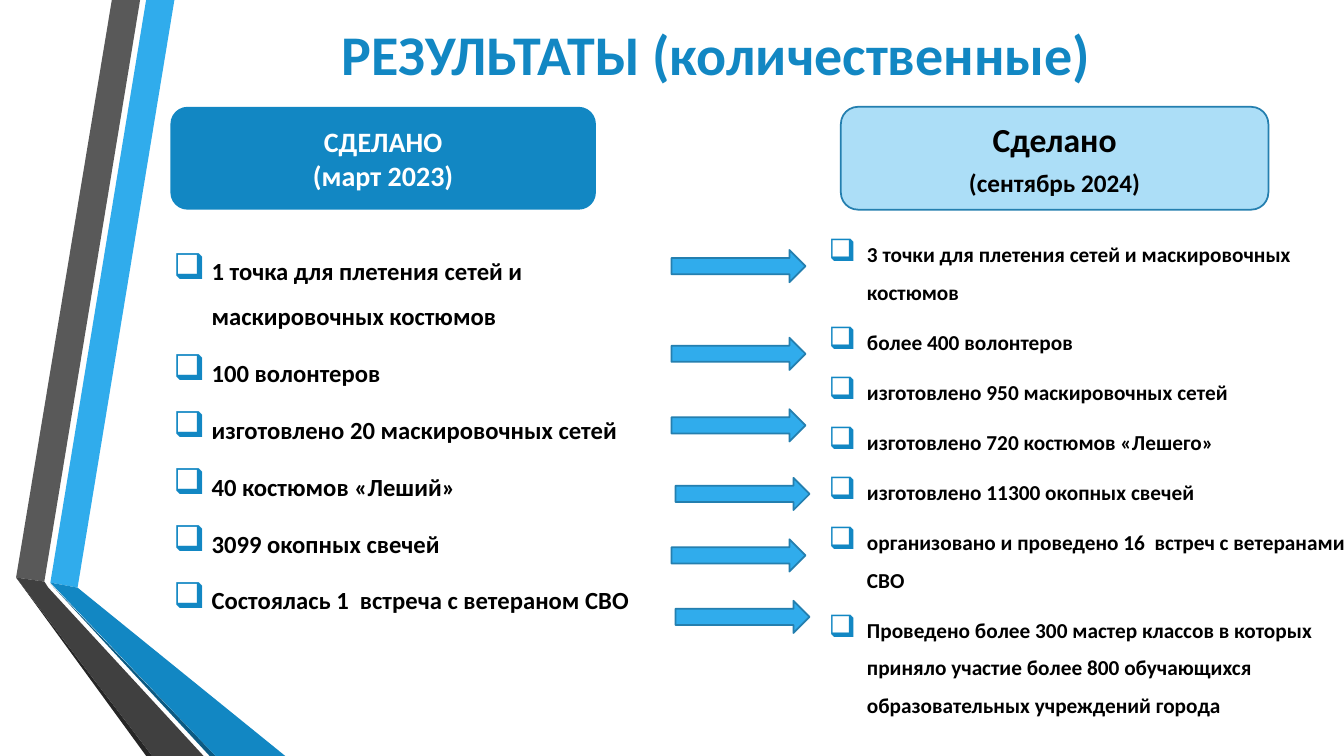
import dataclasses

import lxml.etree
import pptx
import pptx.dml.color
import pptx.enum.shapes
import pptx.enum.text
import pptx.oxml.ns
import pptx.util

SHAPES = pptx.enum.shapes.MSO_SHAPE
ALIGN = pptx.enum.text.PP_ALIGN
ANCHOR = pptx.enum.text.MSO_ANCHOR


@dataclasses.dataclass(frozen=True)
class Theme:
    font: str = "Calibri"
    blue: str = "1287C3"
    bright: str = "30ACEC"
    pale: str = "ACDEF7"
    outline: str = "247FAF"
    navy: str = "0C5A82"
    gray: str = "595959"
    dark: str = "404040"
    darkest: str = "262626"
    black: str = "000000"
    white: str = "FFFFFF"
    title: float = 40
    before_head: float = 20
    after_head: float = 24
    after_date: float = 18
    before_list: float = 17.6
    after_list: float = 15.2
    line: float = 1.25
    item_gap: float = 9


@dataclasses.dataclass(frozen=True)
class Box:
    left: float
    top: float
    width: float
    height: float

    def emu(self):
        return [pptx.util.Inches(v) for v in dataclasses.astuple(self)]


THEME = Theme()
SLIDE = Box(0, 0, 13.33, 7.5)

RIBBON_GRID = (267, 750)
RIBBONS = [
    (THEME.bright, [(34, 578), (61, 583), (157, 0), (129, 0)]),
    (THEME.gray, [(123, 0), (95, 0), (0, 573), (28, 577)]),
    (THEME.darkest, [(0, 573), (129, 750), (135, 750)]),
    (THEME.navy, [(34, 579), (192, 750), (198, 750)]),
    (THEME.blue, [(34, 578), (198, 750), (267, 750), (61, 583)]),
    (THEME.dark, [(186, 750), (32, 583), (28, 577), (0, 573), (135, 750)]),
]

BEFORE = [
    "1 точка для плетения сетей и маскировочных костюмов",
    "100 волонтеров",
    "изготовлено 20 маскировочных сетей",
    "40 костюмов «Леший»",
    "3099 окопных свечей",
    "Состоялась 1  встреча с ветераном СВО",
]
AFTER = [
    "3 точки для плетения сетей и маскировочных костюмов",
    "более 400 волонтеров",
    "изготовлено 950 маскировочных сетей",
    "изготовлено 720 костюмов «Лешего»",
    "изготовлено 11300 окопных свечей",
    "организовано и проведено 16  встреч с ветеранами СВО",
    "Проведено более 300 мастер классов в которых приняло участие "
    "более 800 обучающихся образовательных учреждений города",
]
ARROW_SPOTS = [(0, 0), (0, 0.87), (0, 1.58), (0.04, 2.26), (0, 2.87), (0.04, 3.48)]


def rgb(color):
    return pptx.dml.color.RGBColor.from_string(color)


def paint(shape, fill, outline=None):
    shape.shadow.inherit = False
    shape.fill.solid()
    shape.fill.fore_color.rgb = rgb(fill)
    if outline:
        shape.line.color.rgb = rgb(outline)
        shape.line.width = pptx.util.Pt(THEME.line)
    else:
        shape.line.fill.background()


def write(shape, lines, sizes, color, align, anchor):
    frame = shape.text_frame
    frame.text = "\n".join(lines)
    frame.word_wrap = True
    frame.vertical_anchor = anchor
    for paragraph, size in zip(frame.paragraphs, sizes):
        paragraph.alignment = align
        for run in paragraph.runs:
            run.font.name = THEME.font
            run.font.size = pptx.util.Pt(size)
            run.font.bold = True
            run.font.color.rgb = rgb(color)
    return frame


def add_checkbox(paragraph):
    props = paragraph._p.get_or_add_pPr()
    indent = pptx.util.Inches(0.38)
    props.set("marL", str(indent))
    props.set("indent", str(-indent))
    qn = pptx.oxml.ns.qn
    bullet_color = lxml.etree.SubElement(props, qn("a:buClr"))
    lxml.etree.SubElement(bullet_color, qn("a:srgbClr"), val=THEME.blue)
    lxml.etree.SubElement(props, qn("a:buSzPct"), val="145000")
    lxml.etree.SubElement(props, qn("a:buChar"), char="❑")


def draw_ribbons(slide, box):
    left, top, width, height = box.emu()
    scale = (width / RIBBON_GRID[0], height / RIBBON_GRID[1])
    for color, (start, *corners) in RIBBONS:
        outline = slide.shapes.build_freeform(*start, scale=scale)
        outline.add_line_segments(corners, close=True)
        paint(outline.convert_to_shape(left, top), color)


def draw_title(slide, box):
    title = slide.shapes.add_textbox(*box.emu())
    write(title, ["РЕЗУЛЬТАТЫ (количественные)"], [THEME.title], THEME.blue,
          ALIGN.CENTER, ANCHOR.MIDDLE)


def draw_header(slide, box, lines, sizes, color, fill, outline=None, gap=0):
    header = slide.shapes.add_shape(SHAPES.ROUNDED_RECTANGLE, *box.emu())
    paint(header, fill, outline)
    frame = write(header, lines, sizes, color, ALIGN.CENTER, ANCHOR.MIDDLE)
    frame.paragraphs[-1].space_before = pptx.util.Pt(gap)


def draw_checklist(slide, box, items, size, spacing):
    checklist = slide.shapes.add_textbox(*box.emu())
    frame = write(checklist, items, [size] * len(items), THEME.black,
                  ALIGN.LEFT, ANCHOR.BOTTOM)
    frame.margin_top = frame.margin_bottom = 0
    for paragraph in frame.paragraphs:
        paragraph.line_spacing = spacing
        paragraph.space_before = pptx.util.Pt(THEME.item_gap)
        add_checkbox(paragraph)


def draw_arrows(slide, box):
    for shift, drop in ARROW_SPOTS:
        spot = Box(box.left + shift, box.top + drop, 1.33, 0.32)
        arrow = slide.shapes.add_shape(SHAPES.RIGHT_ARROW, *spot.emu())
        paint(arrow, THEME.bright, THEME.outline)


def draw_results(slide):
    draw_ribbons(slide, Box(0.16, 0, 2.67, SLIDE.height))
    draw_title(slide, Box(1.62, 0, 10.96, 1.06))
    draw_header(slide, Box(1.69, 1.06, 4.22, 1.02), ["СДЕЛАНО", "(март 2023)"],
                [THEME.before_head] * 2, THEME.white, THEME.blue)
    draw_header(slide, Box(8.34, 1.06, 4.24, 1.02), ["Сделано", "(сентябрь 2024)"],
                [THEME.after_head, THEME.after_date], THEME.black,
                THEME.pale, THEME.outline, gap=6)
    draw_checklist(slide, Box(1.62, 2.19, 4.99, 3.91), BEFORE, THEME.before_list, 1.5)
    draw_checklist(slide, Box(8.12, 2.2, 5.55, 4.92), AFTER, THEME.after_list, 1.47)
    draw_arrows(slide, Box(6.66, 2.48, 1.37, 3.8))


def main():
    deck = pptx.Presentation()
    deck.slide_width, deck.slide_height = SLIDE.emu()[2:]
    draw_results(deck.slides.add_slide(deck.slide_layouts[6]))
    deck.save("out.pptx")


if __name__ == "__main__":
    main()
